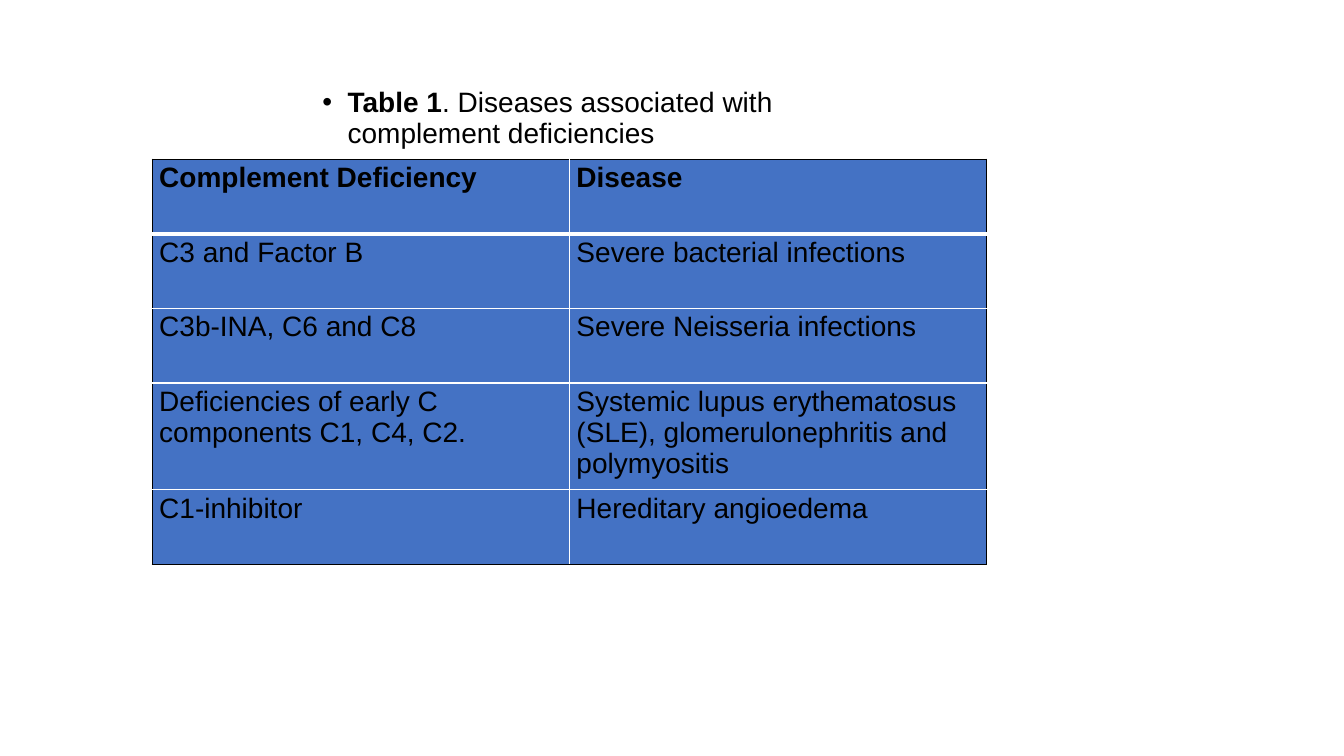
from lxml.etree import SubElement
from pptx import Presentation
from pptx.dml.color import RGBColor
from pptx.enum.text import MSO_ANCHOR
from pptx.oxml.ns import qn
from pptx.util import Pt

EMU_PER_PX = 9144
BLACK = RGBColor(0x00, 0x00, 0x00)
WHITE = RGBColor(0xFF, 0xFF, 0xFF)
BLUE = RGBColor(0x44, 0x72, 0xC4)

CAPTION_BOX = (310, 83, 623, 71)
TABLE_BOX = (151, 158, 828, 402)
ROW_HEIGHTS = (74, 74, 74, 106, 74)
DEFICIENCIES = (
    ("Complement Deficiency", "Disease"),
    ("C3 and Factor B", "Severe bacterial infections"),
    ("C3b-INA, C6 and C8", "Severe Neisseria infections"),
    ("Deficiencies of early C components C1, C4, C2.",
     "Systemic lupus erythematosus (SLE), glomerulonephritis and polymyositis"),
    ("C1-inhibitor", "Hereditary angioedema"),
)


def px(length):
    """Turn a length in px into EMU."""
    return round(length * EMU_PER_PX)


def apply_format(target, values):
    """Set each named attribute of the target."""
    for attribute, value in values.items():
        setattr(target, attribute, value)


def add_words(paragraph, words, bold=False):
    """Append a run in the slide's text style."""
    run = paragraph.add_run()
    run.text = words
    apply_format(run.font, {"name": "Arial", "size": Pt(20), "bold": bold})
    run.font.color.rgb = BLACK


def add_caption(slide, box):
    """Place the bulleted table caption in its box."""
    frame = slide.shapes.add_textbox(*map(px, box)).text_frame
    apply_format(frame, {"word_wrap": True, "vertical_anchor": MSO_ANCHOR.TOP,
                         "margin_left": px(10), "margin_right": px(20),
                         "margin_top": px(5), "margin_bottom": px(5)})
    caption = frame.paragraphs[0]
    apply_format(caption, {"line_spacing": 0.9, "space_before": Pt(10)})
    properties = caption._p.get_or_add_pPr()
    properties.set("marL", str(px(25)))
    properties.set("indent", str(px(-25)))
    SubElement(properties, qn("a:buFont"), typeface="Arial")
    SubElement(properties, qn("a:buChar"), char="•")
    add_words(caption, "Table 1", bold=True)
    add_words(caption, ". Diseases associated with complement deficiencies")


def set_borders(cell, borders):
    """Draw the left, right, top and bottom borders of a cell."""
    properties = cell._tc.get_or_add_tcPr()
    for position, (side, (color, width)) in enumerate(borders.items()):
        line = SubElement(properties, qn(f"a:ln{side}"), w=str(Pt(width)))
        fill = SubElement(line, qn("a:solidFill"))
        SubElement(fill, qn("a:srgbClr"), val=str(color))
        properties.insert(position, line)


def add_deficiency_table(slide, box):
    """Place the table of deficiencies and diseases in its box."""
    last_row, last_column = len(DEFICIENCIES) - 1, len(DEFICIENCIES[0]) - 1
    table = slide.shapes.add_table(
        last_row + 1, last_column + 1, *map(px, box)).table
    for row, height in zip(table.rows, ROW_HEIGHTS):
        row.height = px(height)
    outer, inner, header_rule = (BLACK, 1), (WHITE, 1), (WHITE, 3)
    for r, entries in enumerate(DEFICIENCIES):
        for c, entry in enumerate(entries):
            cell = table.cell(r, c)
            apply_format(cell, {"margin_left": px(7), "margin_right": px(7),
                                "margin_top": px(3), "margin_bottom": px(3)})
            cell.fill.solid()
            cell.fill.fore_color.rgb = BLUE
            add_words(cell.text_frame.paragraphs[0], entry, bold=r == 0)
            set_borders(cell, {
                "L": outer if c == 0 else inner,
                "R": outer if c == last_column else inner,
                "T": {0: outer, 1: header_rule}.get(r, inner),
                "B": {0: header_rule, last_row: outer}.get(r, inner),
            })


def main():
    """Build the slide and save it."""
    deck = Presentation()
    apply_format(deck, {"slide_width": px(1333.33), "slide_height": px(750)})
    slide = deck.slides.add_slide(deck.slide_layouts[6])
    add_caption(slide, CAPTION_BOX)
    add_deficiency_table(slide, TABLE_BOX)
    deck.save("out.pptx")


if __name__ == "__main__":
    main()
